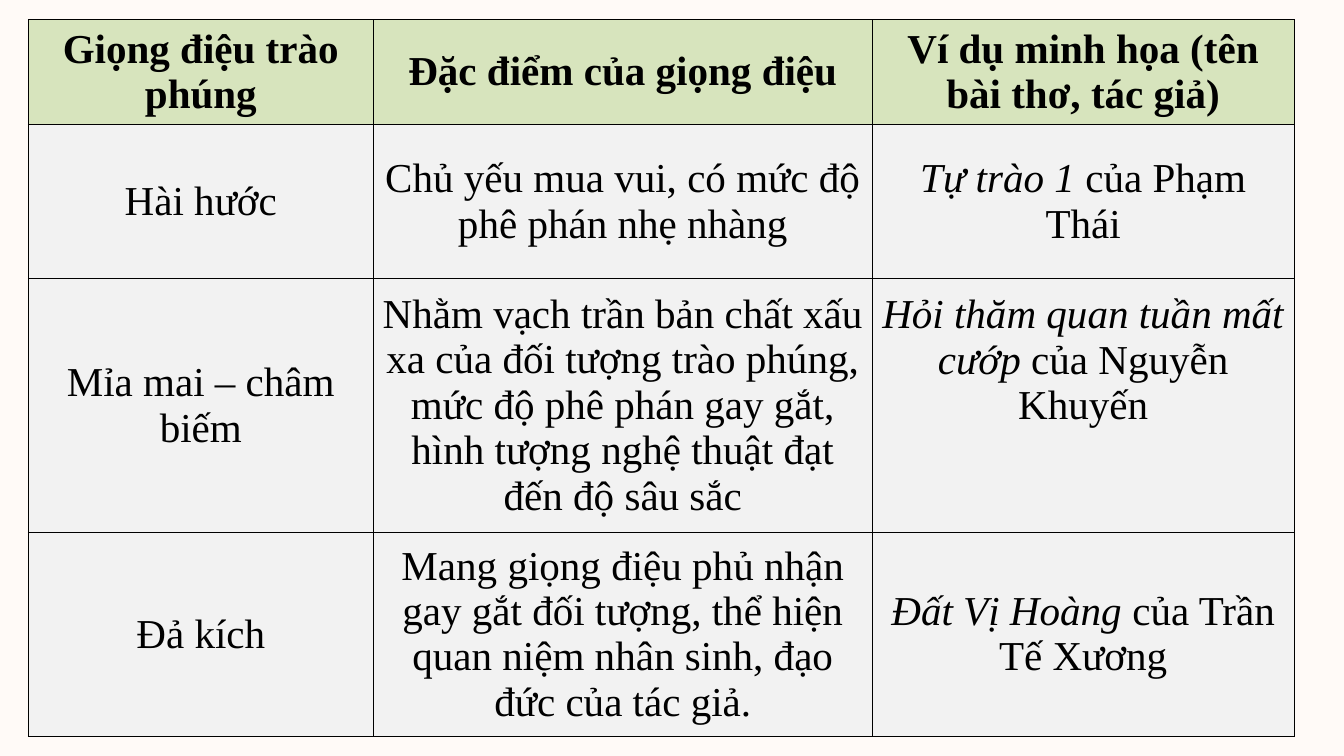
from lxml import etree
from pptx import Presentation
from pptx.dml.color import RGBColor
from pptx.enum import text
from pptx.oxml import ns
from pptx.util import Inches, Pt

BACKGROUND = RGBColor(0xFF, 0xFA, 0xF7)
HEADER_FILL = RGBColor(0xD7, 0xE4, 0xBD)
BODY_FILL = RGBColor(0xF2, 0xF2, 0xF2)
INK = RGBColor(0, 0, 0)

COLUMN_WIDTHS = [5.14, 7.42, 6.28]
ROW_HEIGHTS = [1.56, 2.3, 3.77, 3.04]
HEADERS = ["Giọng điệu trào phúng", "Đặc điểm của giọng điệu",
           "Ví dụ minh họa (tên bài thơ, tác giả)"]
# Tone, its features, poem title, author
TONES = [
    ("Hài hước", "Chủ yếu mua vui, có mức độ phê phán nhẹ nhàng",
     "Tự trào 1 ", "của Phạm Thái"),
    ("Mỉa mai – châm biếm",
     "Nhằm vạch trần bản chất xấu xa của đối tượng trào phúng, mức độ phê phán "
     "gay gắt, hình tượng nghệ thuật đạt đến độ sâu sắc",
     "Hỏi thăm quan tuần mất cướp ", "của Nguyễn Khuyến"),
    ("Đả kích",
     "Mang giọng điệu phủ nhận gay gắt đối tượng, thể hiện quan niệm nhân sinh, "
     "đạo đức của tác giả.",
     "Đất Vị Hoàng ", "của Trần Tế Xương"),
]


class SlideBuilder:
    font_name = "Times New Roman"
    font_size = Pt(44)
    border_width = Pt(1)

    def __init__(self, slide):
        self.slide = slide

    def background(self, color):
        fill = self.slide.background.fill
        fill.solid()
        fill.fore_color.rgb = color

    def table(self, left, top, widths, heights):
        table = self.slide.shapes.add_table(
            len(heights), len(widths), Inches(left), Inches(top),
            Inches(sum(widths)), Inches(sum(heights))).table
        table.horz_banding = False
        for column, width in zip(table.columns, widths):
            column.width = Inches(width)
        for row, height in zip(table.rows, heights):
            row.height = Inches(height)
        return table

    def cell(self, cell, runs, fill, bold=False):
        """Fill a cell with runs given as (wording, italic) pairs."""
        cell.vertical_anchor = text.MSO_ANCHOR.MIDDLE
        self.borders(cell)
        cell.fill.solid()
        cell.fill.fore_color.rgb = fill
        paragraph = cell.text_frame.paragraphs[0]
        paragraph.alignment = text.PP_ALIGN.CENTER
        font = paragraph.font
        font.name, font.size, font.bold = self.font_name, self.font_size, bold
        font.color.rgb = INK
        for wording, italic in runs:
            run = paragraph.add_run()
            run.text = wording
            run.font.bold = bold
            run.font.italic = italic

    def borders(self, cell):
        properties = cell._tc.get_or_add_tcPr()
        for side in ("lnL", "lnR", "lnT", "lnB"):
            line = etree.SubElement(properties, ns.qn(f"a:{side}"),
                                    w=str(self.border_width))
            solid = etree.SubElement(line, ns.qn("a:solidFill"))
            etree.SubElement(solid, ns.qn("a:srgbClr"), val=str(INK))


def main():
    deck = Presentation()
    deck.slide_width, deck.slide_height = Inches(20), Inches(11.25)
    builder = SlideBuilder(deck.slides.add_slide(deck.slide_layouts[6]))
    builder.background(BACKGROUND)

    tones_table = builder.table(0.42, 0.29, COLUMN_WIDTHS, ROW_HEIGHTS)
    for column, header in enumerate(HEADERS):
        builder.cell(tones_table.cell(0, column), [(header, False)],
                     HEADER_FILL, bold=True)
    for row, (tone, features, poem, author) in enumerate(TONES, start=1):
        contents = [[(tone, False)], [(features, False)],
                    [(poem, True), (author, False)]]
        for column, runs in enumerate(contents):
            builder.cell(tones_table.cell(row, column), runs, BODY_FILL)
    # The second example sits two lines above the bottom of its cell
    tones_table.cell(2, 2).margin_bottom = Inches(1.4)

    deck.save("out.pptx")


if __name__ == "__main__":
    main()
